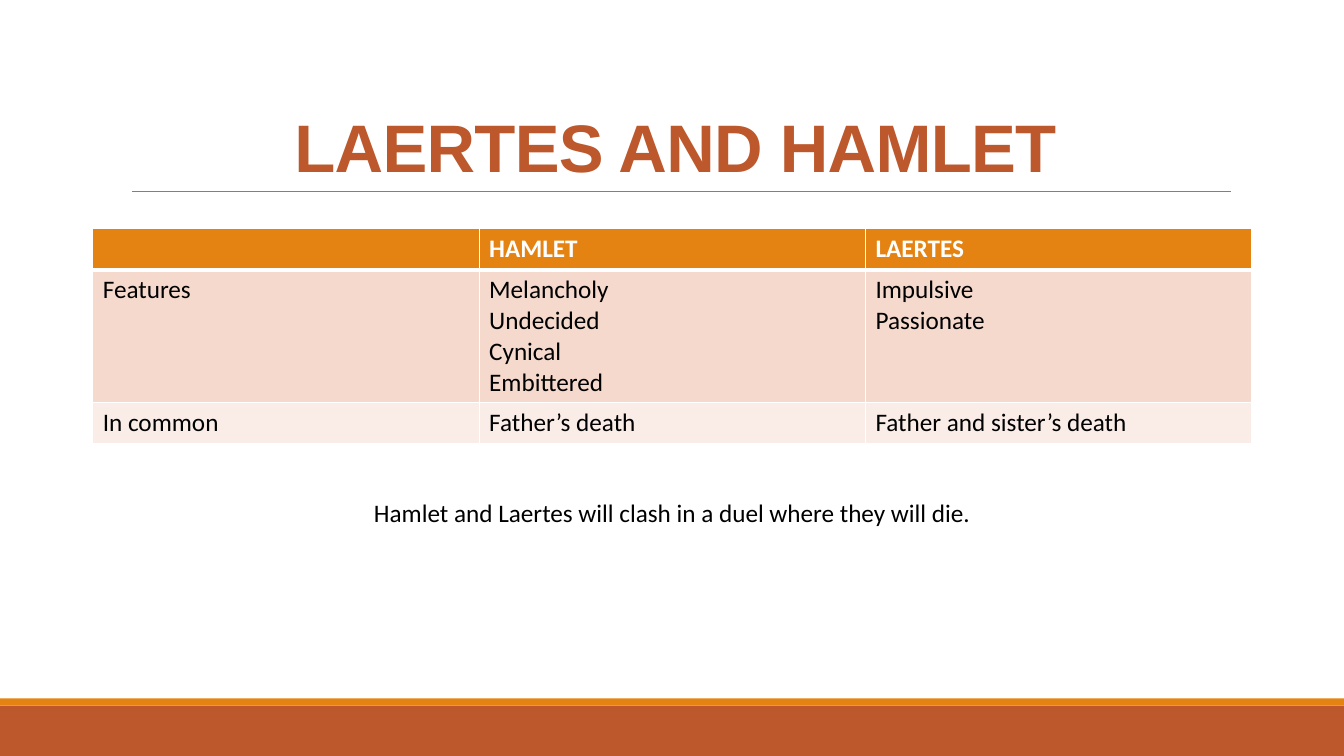
"""Build a slide comparing Laertes and Hamlet in a table."""
from dataclasses import dataclass

from lxml.etree import SubElement
from pptx import Presentation
from pptx.dml.color import RGBColor as Rgb
from pptx.enum.shapes import MSO_CONNECTOR as Connector, MSO_SHAPE as Shape
from pptx.enum.text import MSO_ANCHOR as Anchor, PP_ALIGN as Align
from pptx.oxml import parse_xml
from pptx.oxml.ns import nsdecls, qn
from pptx.util import Pt

TITLE = "LAERTES AND HAMLET"
COMPARISON = [
    ("", "HAMLET", "LAERTES"),
    ("Features", "Melancholy\nUndecided\nCynical\nEmbittered", "Impulsive\nPassionate"),
    ("In common", "Father’s death", "Father and sister’s death"),
]
OUTCOME = "Hamlet and Laertes will clash in a duel where they will die."


@dataclass(frozen=True)
class Theme:
    """Colours, fonts and type sizes."""

    rust: str = "BD582C"
    orange: str = "E48312"
    rule: str = "808080"
    white: str = "FFFFFF"
    ink: str = "000000"
    row_fills: tuple = ("E48312", "F5D9CC", "FAEDE7")
    title_font: str = "Arial"
    body_font: str = "Calibri"
    title_size: int = 48
    body_size: int = 18


THEME = Theme()
WIDTH, HEIGHT = 960, 540
FOOTER_TOP, STRIPE = 504, 5.04
MARGIN, CONTENT_WIDTH = 66.24, 828
TABLE_TOP, ROW_HEIGHTS = 163.44, (29.2, 94.8, 29.2)


def style_text(frame, font, size, colour, bold=False, align=Align.LEFT):
    """Format every paragraph and run of a text frame."""
    for paragraph in frame.paragraphs:
        paragraph.alignment = align
        for run in paragraph.runs:
            run.font.name, run.font.size = font, Pt(size)
            run.font.bold = bold
            run.font.color.rgb = Rgb.from_string(colour)


def add_band(slide, top, height, colour):
    """Add a full-width colour band."""
    band = slide.shapes.add_shape(Shape.RECTANGLE, 0, Pt(top), Pt(WIDTH), Pt(height))
    band.shadow.inherit = False
    band.fill.solid()
    band.fill.fore_color.rgb = Rgb.from_string(colour)
    band.line.fill.background()


def add_label(slide, text, left, top, width, height, anchor=Anchor.TOP):
    """Add a wrapped text box and return its text frame."""
    frame = slide.shapes.add_textbox(Pt(left), Pt(top), Pt(width), Pt(height)).text_frame
    frame.word_wrap = True
    frame.vertical_anchor = anchor
    frame.text = text
    return frame


def add_borders(cell, bottom_width):
    """Give a cell white borders on all four sides."""
    properties = cell._tc.get_or_add_tcPr()
    for position, side in enumerate(("lnL", "lnR", "lnT", "lnB")):
        width = bottom_width if side == "lnB" else 1
        border = parse_xml(
            f'<a:{side} {nsdecls("a")} w="{Pt(width)}"><a:solidFill>'
            f'<a:srgbClr val="{THEME.white}"/></a:solidFill></a:{side}>'
        )
        properties.insert(position, border)


def add_comparison(slide):
    """Add the character comparison table."""
    columns = len(COMPARISON[0])
    table = slide.shapes.add_table(
        len(COMPARISON), columns, Pt(MARGIN), Pt(TABLE_TOP),
        Pt(CONTENT_WIDTH), Pt(sum(ROW_HEIGHTS)),
    ).table
    for column in table.columns:
        column.width = Pt(CONTENT_WIDTH / columns)
    for index, entries in enumerate(COMPARISON):
        heading = index == 0
        table.rows[index].height = Pt(ROW_HEIGHTS[index])
        for cell, entry in zip(table.rows[index].cells, entries):
            cell.text_frame.text = entry
            style_text(cell.text_frame, THEME.body_font, THEME.body_size,
                       THEME.white if heading else THEME.ink, bold=heading)
            cell.fill.solid()
            cell.fill.fore_color.rgb = Rgb.from_string(THEME.row_fills[index])
            add_borders(cell, 3 if heading else 1)


def main():
    """Assemble and save the slide."""
    deck = Presentation()
    deck.slide_width, deck.slide_height = Pt(WIDTH), Pt(HEIGHT)
    slide = deck.slides.add_slide(deck.slide_layouts[6])

    add_band(slide, FOOTER_TOP, HEIGHT - FOOTER_TOP, THEME.rust)
    add_band(slide, FOOTER_TOP - STRIPE, STRIPE, THEME.orange)

    rule = slide.shapes.add_connector(Connector.STRAIGHT, Pt(94.3), Pt(136.6), Pt(879), Pt(136.6))
    rule.line.color.rgb = Rgb.from_string(THEME.rule)
    rule.line.width = Pt(0.5)
    SubElement(rule._element.spPr, qn("a:effectLst"))

    title = add_label(slide, TITLE, 86.4, 22.4, 792, 114.2, Anchor.BOTTOM)
    style_text(title, THEME.title_font, THEME.title_size, THEME.rust, True, Align.CENTER)
    title.paragraphs[0].line_spacing = 0.85
    title.paragraphs[0].runs[0].font._element.set("spc", "-50")

    add_comparison(slide)

    outcome = add_label(slide, OUTCOME, MARGIN, 351.4, CONTENT_WIDTH, 29)
    style_text(outcome, THEME.body_font, THEME.body_size, THEME.ink, align=Align.CENTER)

    deck.save("out.pptx")


if __name__ == "__main__":
    main()
